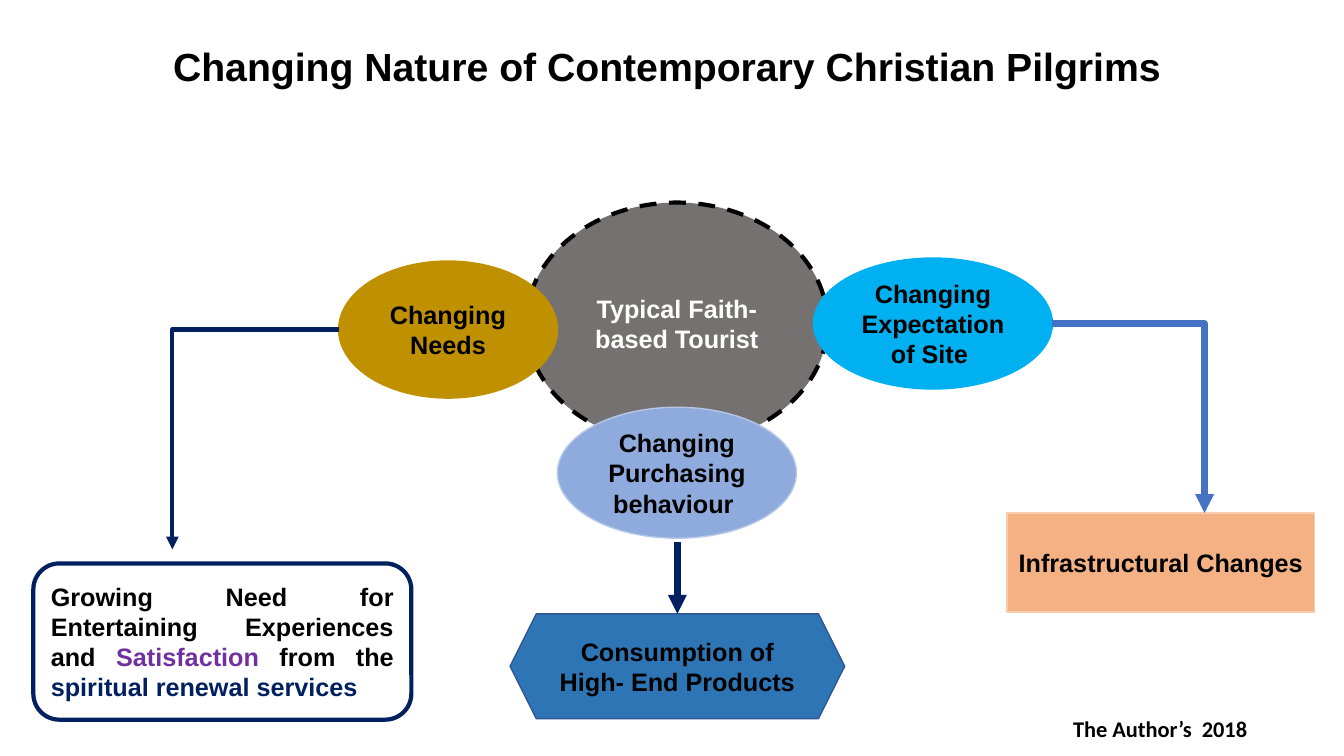
import pptx
import pptx.util
import pptx.dml.color
import pptx.enum.dml
import pptx.enum.shapes
import pptx.enum.text
import lxml.etree
import pptx.oxml.ns

RGBColor = pptx.dml.color.RGBColor
Shape = pptx.enum.shapes.MSO_SHAPE
Align = pptx.enum.text.PP_ALIGN

BLACK = RGBColor(0x00, 0x00, 0x00)
WHITE = RGBColor(0xFF, 0xFF, 0xFF)
GREY = RGBColor(0x76, 0x71, 0x71)
GOLD = RGBColor(0xBF, 0x90, 0x00)
SKY = RGBColor(0x00, 0xB0, 0xF0)
PERIWINKLE = RGBColor(0x8F, 0xAA, 0xDC)
PALE_BLUE = RGBColor(0xB4, 0xC7, 0xE7)
NAVY = RGBColor(0x00, 0x20, 0x60)
PURPLE = RGBColor(0x70, 0x30, 0xA0)
ORANGE = RGBColor(0xF4, 0xB1, 0x83)
PEACH = RGBColor(0xF8, 0xCB, 0xAD)
BLUE = RGBColor(0x2E, 0x75, 0xB6)
DARK_BLUE = RGBColor(0x32, 0x54, 0x91)
ROYAL = RGBColor(0x44, 0x72, 0xC4)

presentation = pptx.Presentation()
presentation.slide_width = pptx.util.Inches(13.33)
presentation.slide_height = pptx.util.Inches(7.5)
slide = presentation.slides.add_slide(presentation.slide_layouts[6])


def place(*shares):
    """Turn alternating percentages of slide width and height into lengths."""
    sizes = (presentation.slide_width, presentation.slide_height)
    return [round(sizes[i % 2] * share / 100) for i, share in enumerate(shares)]


def write(shape, runs, size=18, font="Arial", align=Align.CENTER):
    """Fill a shape with one bold paragraph of (text, colour) runs."""
    frame = shape.text_frame
    frame.word_wrap = True
    frame.vertical_anchor = pptx.enum.text.MSO_ANCHOR.MIDDLE
    paragraph = frame.paragraphs[0]
    paragraph.alignment = align
    paragraph.font.size = pptx.util.Pt(size)
    paragraph.font.name = font
    paragraph.font.bold = True
    for text, color in runs:
        run = paragraph.add_run()
        run.text = text
        run.font.color.rgb = color
    return paragraph


title = slide.shapes.add_textbox(*place(6.9, 4.8, 86.25, 8.53))
title_text = "Changing Nature of Contemporary Christian Pilgrims "
write(title, [(title_text, BLACK)], size=28).line_spacing = 0.9

# Kind, place, fill, line colour, line width, text runs, other text settings
boxes = [
    (Shape.OVAL, (39.15, 26.8, 22.43, 32), GREY, BLACK, 3,
     [("Typical Faith-based Tourist", WHITE)], {}),
    (Shape.OVAL, (25.2, 34.53, 16.28, 18.13), GOLD, GOLD, 1,
     [("Changing Needs", BLACK)], {}),
    (Shape.OVAL, (60.53, 34.13, 17.78, 17.33), SKY, SKY, 1,
     [("Changing Expectation of Site ", BLACK)], {}),
    (Shape.OVAL, (41.48, 53.87, 17.78, 17.33), PERIWINKLE, PALE_BLUE, 1,
     [("Changing Purchasing behaviour ", BLACK)], {}),
    (Shape.ROUNDED_RECTANGLE, (2.48, 74.53, 28.13, 20.67), WHITE, NAVY, 3,
     [("Growing Need for Entertaining Experiences and ", BLACK),
      ("Satisfaction", PURPLE), (" from the ", BLACK),
      ("spiritual renewal services ", NAVY)], {"align": Align.JUSTIFY}),
    (Shape.RECTANGLE, (74.93, 67.87, 22.88, 13.07), ORANGE, PEACH, 1,
     [("Infrastructural Changes ", BLACK)], {}),
    (Shape.HEXAGON, (37.95, 81.2, 24.9, 13.87), BLUE, DARK_BLUE, 1,
     [("Consumption of High- End Products ", BLACK)], {}),
    (Shape.RECTANGLE, (78.3, 94.93, 16.05, 2.93), WHITE, WHITE, 1,
     [("The Author’s  2018", BLACK)], {"size": 16, "font": "Calibri"}),
]
for kind, area, fill, line, width, runs, settings in boxes:
    shape = slide.shapes.add_shape(kind, *place(*area))
    shape.shadow.inherit = False
    shape.fill.solid()
    shape.fill.fore_color.rgb = fill
    shape.line.color.rgb = line
    shape.line.width = pptx.util.Pt(width)
    if fill == GREY:
        shape.line.dash_style = pptx.enum.dml.MSO_LINE.DASH
    write(shape, runs, **settings)

# Start and end, colour, width
arrows = [
    ((25.2, 43.6, 12.83, 72.67), NAVY, 3),
    ((78.3, 42.8, 89.63, 67.87), ROYAL, 4.5),
    ((50.4, 71.73, 50.4, 81.2), NAVY, 4.5),
]
for ends, color, width in arrows:
    straight = ends[0] == ends[2]
    connector_type = pptx.enum.shapes.MSO_CONNECTOR
    kind = connector_type.STRAIGHT if straight else connector_type.ELBOW
    arrow = slide.shapes.add_connector(kind, *place(*ends))
    arrow.line.color.rgb = color
    arrow.line.width = pptx.util.Pt(width)
    properties = arrow._element.spPr
    if not straight:
        # A single bend: across first, then down
        properties.find(pptx.oxml.ns.qn("a:prstGeom")).set("prst", "bentConnector2")
    line = properties.find(pptx.oxml.ns.qn("a:ln"))
    lxml.etree.SubElement(line, pptx.oxml.ns.qn("a:tailEnd"), type="triangle")
    lxml.etree.SubElement(properties, pptx.oxml.ns.qn("a:effectLst"))

presentation.save("out.pptx")
